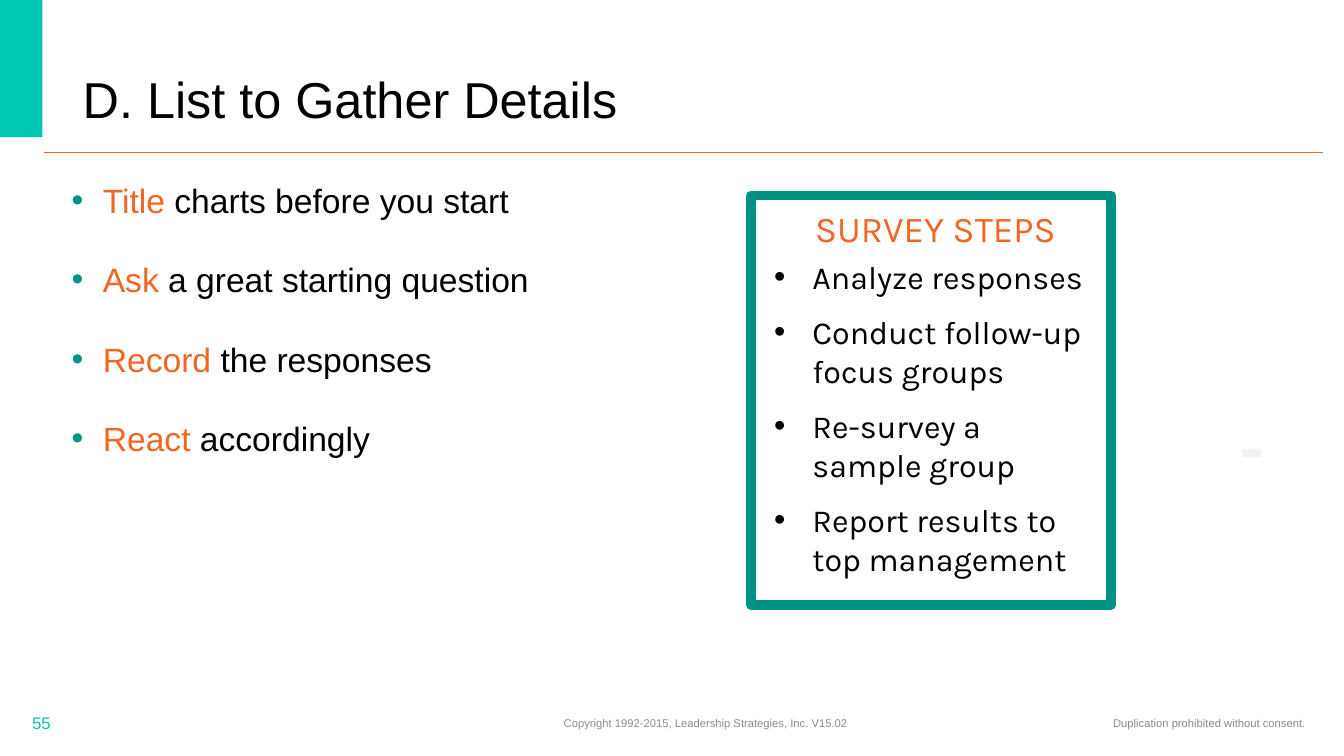
from lxml.etree import SubElement
from pptx import Presentation
from pptx.dml.color import RGBColor
from pptx.enum.shapes import MSO_CONNECTOR as CONNECTOR, MSO_SHAPE as SHAPE
from pptx.enum.text import MSO_ANCHOR as ANCHOR, MSO_AUTO_SIZE as AUTO_SIZE, PP_ALIGN as ALIGN
from pptx.oxml.ns import qn
from pptx.util import Inches, Pt

BLACK = RGBColor(0x00, 0x00, 0x00)
WHITE = RGBColor(0xFF, 0xFF, 0xFF)
TURQUOISE = RGBColor(0x00, 0xC7, 0xB1)
TEAL = RGBColor(0x00, 0x93, 0x83)
ORANGE = RGBColor(0xF2, 0x65, 0x22)
GRAY = RGBColor(0x89, 0x89, 0x89)
COPYRIGHT_GRAY = RGBColor(0x8C, 0x8C, 0x8C)
PALE_GRAY = RGBColor(0xF2, 0xF2, 0xF2)

ACTIONS = [
    ("Title ", "charts before you start"),
    ("Ask ", "a great starting question"),
    ("Record ", "the responses"),
    ("React ", "accordingly"),
]
SURVEY_STEPS = [
    "Analyze responses",
    "Conduct follow-up focus groups",
    "Re-survey a sample group",
    "Report results to top management",
]


def inches(box):
    return [Inches(length) for length in box]


def place(shape, box):
    shape.left, shape.top, shape.width, shape.height = inches(box)


def add_run(paragraph, text, size, color, name="Arial", bold=False):
    run = paragraph.add_run()
    run.text = text
    run.font.color.rgb = color
    for attribute, value in {"size": Pt(size), "name": name, "bold": bold}.items():
        setattr(run.font, attribute, value)


def add_text(slide, box, text, size, color, name="Arial", align=ALIGN.LEFT,
             anchor=ANCHOR.TOP, wrap=True, bold=False):
    frame = slide.shapes.add_textbox(*inches(box)).text_frame
    frame.word_wrap = wrap
    frame.vertical_anchor = anchor
    frame.paragraphs[0].alignment = align
    add_run(frame.paragraphs[0], text, size, color, name, bold)


def add_bullet(paragraph, color, indent):
    properties = paragraph._p.get_or_add_pPr()
    properties.set("marL", str(Inches(indent)))
    properties.set("indent", str(-Inches(indent)))
    bullet_color = SubElement(properties, qn("a:buClr"))
    SubElement(bullet_color, qn("a:srgbClr"), val=str(color))
    SubElement(properties, qn("a:buFont"), typeface="Arial")
    SubElement(properties, qn("a:buChar"), char="•")


def fill_list(frame, items, bullet_color, indent, before, after):
    """Yield one formatted bullet paragraph with each item."""
    for index, item in enumerate(items):
        paragraph = frame.add_paragraph() if index else frame.paragraphs[0]
        paragraph.space_before = Pt(before if index else 0)
        paragraph.space_after = Pt(after)
        add_bullet(paragraph, bullet_color, indent)
        yield paragraph, item


def add_rectangle(slide, box, fill, line=None, width=0):
    shape = slide.shapes.add_shape(SHAPE.RECTANGLE, *inches(box))
    shape.shadow.inherit = False
    shape.fill.solid()
    shape.fill.fore_color.rgb = fill
    if line is None:
        shape.line.fill.background()
    else:
        shape.line.color.rgb = line
        shape.line.width = Pt(width)


def build_header(slide, box):
    left, top, width, height = box
    # Corner block and rule
    add_rectangle(slide, (left - 0.02, top - 0.02, 0.44, 1.38), TURQUOISE)
    rule = slide.shapes.add_connector(
        CONNECTOR.STRAIGHT,
        *inches((left + 0.44, top + height, left + width - 0.21, top + height)))
    rule.line.color.rgb = ORANGE
    rule.line.width = Pt(0.5)
    SubElement(rule._element.spPr, qn("a:effectLst"))
    # Title
    title = slide.shapes.title
    place(title, (left + 0.72, top + 0.57, 8.12, 0.76))
    frame = title.text_frame
    frame.auto_size = AUTO_SIZE.NONE
    frame.vertical_anchor = ANCHOR.BOTTOM
    paragraph = frame.paragraphs[0]
    paragraph.alignment = ALIGN.LEFT
    paragraph.line_spacing = 0.9
    add_run(paragraph, "D. List to Gather Details", 36, BLACK)


def build_actions(slide, box):
    body = slide.placeholders[1]
    place(body, box)
    frame = body.text_frame
    frame.auto_size = AUTO_SIZE.NONE
    for paragraph, (verb, rest) in fill_list(frame, ACTIONS, TEAL, 0.31, 16, 12):
        add_run(paragraph, verb, 24, ORANGE)
        add_run(paragraph, rest, 24, BLACK)


def build_survey(slide, box):
    left, top, width, height = box
    add_rectangle(slide, box, WHITE, TEAL, 7)
    add_text(slide, (left + 0.18, top + 0.06, 3.3, 0.54), "SURVEY STEPS",
             26, ORANGE, "Karla", ALIGN.CENTER)
    steps = slide.shapes.add_textbox(*inches((left + 0.13, top + 0.56, 3.3, height - 0.74)))
    frame = steps.text_frame
    frame.word_wrap = True
    for paragraph, step in fill_list(frame, SURVEY_STEPS, BLACK, 0.38, 0, 12):
        add_run(paragraph, step, 23, BLACK, "Karla")


def build_footer(slide, box):
    left, top, width, height = box
    notes = [
        (0.22, 3, "55", 12, TURQUOISE, ALIGN.LEFT),
        (3.62, 6.76, "Copyright 1992-2015, Leadership Strategies, Inc. V15.02", 8,
         COPYRIGHT_GRAY, ALIGN.CENTER),
        (7.42, 5.63, "Duplication prohibited without consent.", 8, GRAY, ALIGN.RIGHT),
    ]
    for offset, note_width, text, size, color, align in notes:
        add_text(slide, (left + offset, top, note_width, height), text, size, color,
                 align=align, anchor=ANCHOR.MIDDLE)


def main():
    presentation = Presentation()
    presentation.slide_width = Inches(13.33)
    presentation.slide_height = Inches(7.5)
    slide = presentation.slides.add_slide(presentation.slide_layouts[1])
    build_header(slide, (0, 0, 13.33, 1.51))
    build_actions(slide, (0.61, 1.73, 12.5, 5.03))
    build_survey(slide, (7.45, 1.94, 3.57, 4.06))
    # Pale dash at the right edge
    add_text(slide, (12.19, 3.97, 0.43, 0.91), "-", 48, PALE_GRAY, "Montserrat",
             wrap=False, bold=True)
    build_footer(slide, (0, 6.97, 13.33, 0.4))
    presentation.save("out.pptx")


if __name__ == "__main__":
    main()
